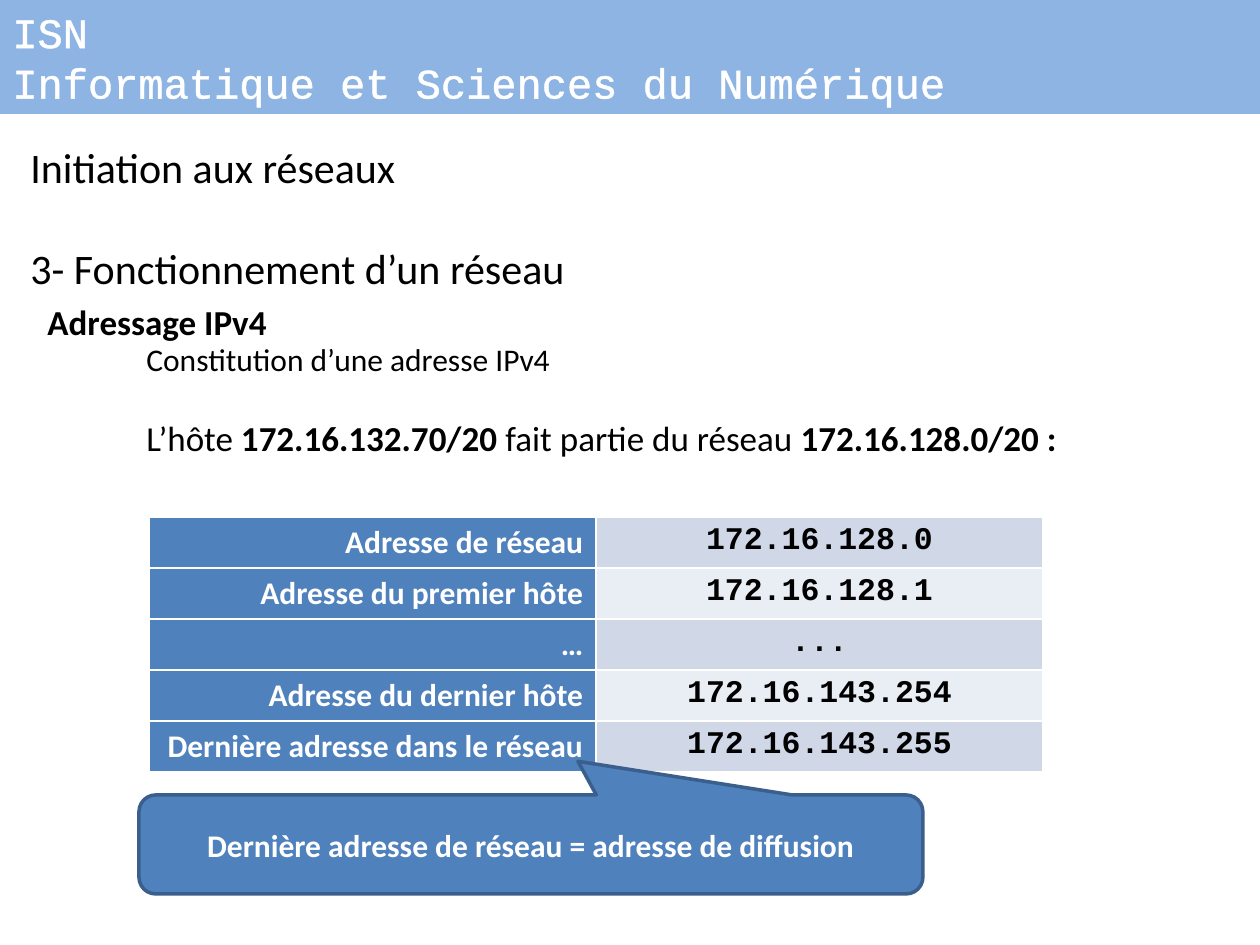
from lxml.etree import SubElement
from pptx import Presentation
from pptx.dml.color import RGBColor
from pptx.enum.shapes import MSO_SHAPE as Shape
from pptx.enum.text import MSO_ANCHOR as Anchor, PP_ALIGN as Align
from pptx.oxml import parse_xml
from pptx.oxml.ns import nsdecls, qn
from pptx.util import Emu, Pt

SCALE = 914400 / 126
BLUE, WHITE, BLACK = "4F81BD", "FFFFFF", "000000"
BANDS = ("D0D8E8", "E9EDF4")
BODY, MONO = "Calibri", "Courier New"

# Each paragraph is (space before, [(text, size, bold), ...]).
BANNER = [
    (0, [("ISN", 24, False)]),
    (0, [("Informatique et Sciences du Numérique", 24, False)]),
]
TEXTS = [
    ((18, 135, 566, 165), [
        (0, [("Initiation aux réseaux", 24, False)]),
        (29, [("3- Fonctionnement d’un réseau", 24, False)]),
    ]),
    ((35, 294, 1181, 55), [(0, [("Adressage IPv4", 20, True)])]),
    ((134, 334, 953, 208), [
        (0, [("Constitution d’une adresse IPv4", 18, False)]),
        (22, [
            ("L’hôte", 20, False),
            (" 172.16.132.70/20 ", 20, True),
            ("fait partie du réseau ", 20, False),
            ("172.16.128.0/20 :", 20, True),
        ]),
    ]),
]
ADDRESSES = [
    ("Adresse de réseau", "172.16.128.0"),
    ("Adresse du premier hôte", "172.16.128.1"),
    ("…", "..."),
    ("Adresse du dernier hôte", "172.16.143.254"),
    ("Dernière adresse dans le réseau", "172.16.143.255"),
]
CALLOUT = [(0, [("Dernière adresse de réseau = adresse de diffusion", 18, True)])]


def px(value):
    return Emu(round(value * SCALE))


def colour(value):
    return RGBColor.from_string(value)


def paint(target, value):
    target.fill.solid()
    target.fill.fore_color.rgb = colour(value)


def write(frame, paras, font=BODY, ink=BLACK, align=Align.LEFT):
    frame.word_wrap = True
    for index, (gap, spans) in enumerate(paras):
        para = frame.add_paragraph() if index else frame.paragraphs[0]
        para.alignment = align
        if gap:
            para.space_before = Pt(gap)
        for text, size, bold in spans:
            span = para.add_run()
            span.text = text
            for name, value in dict(name=font, size=Pt(size), bold=bold).items():
                setattr(span.font, name, value)
            span.font.color.rgb = colour(ink)


def add_block(page, kind, place, fill):
    block = page.shapes.add_shape(kind, *map(px, place))
    block.shadow.inherit = False
    paint(block, fill)
    return block


def add_banner(page):
    banner = add_block(page, Shape.RECTANGLE, (0, 0, 1260, 114), "8EB4E3")
    banner.line.fill.background()
    banner.text_frame.vertical_anchor = Anchor.TOP
    write(banner.text_frame, BANNER, MONO, WHITE)
    for para in banner.text_frame.paragraphs:
        for span in para.runs:
            outline = parse_xml(
                f'<a:ln {nsdecls("a")} w="18415"><a:solidFill>'
                f'<a:srgbClr val="{WHITE}"/></a:solidFill></a:ln>')
            span.font._element.insert(0, outline)


def add_borders(cell):
    props = cell._tc.get_or_add_tcPr()
    for side in ("lnL", "lnR", "lnT", "lnB"):
        border = SubElement(props, qn(f"a:{side}"), w=str(Pt(1)))
        fill = SubElement(border, qn("a:solidFill"))
        SubElement(fill, qn("a:srgbClr"), val=WHITE)


def add_addresses(page):
    place = map(px, (149, 517, 894, 255))
    table = page.shapes.add_table(len(ADDRESSES), 2, *place).table
    for row, texts in enumerate(ADDRESSES):
        styles = ((BLUE, BODY, WHITE, Align.RIGHT),
                  (BANDS[row % 2], MONO, BLACK, Align.CENTER))
        for column, (text, style) in enumerate(zip(texts, styles)):
            fill, *text_style = style
            cell = table.cell(row, column)
            add_borders(cell)
            paint(cell, fill)
            write(cell.text_frame, [(0, [(text, 18, True)])], *text_style)


def add_callout(page):
    callout = add_block(page, Shape.ROUNDED_RECTANGULAR_CALLOUT, (139, 795, 784, 99), BLUE)
    callout.line.color.rgb = colour("3A5F8C")
    callout.line.width = Pt(2)
    for index, value in enumerate((0.06, -0.84, 0.17)):
        callout.adjustments[index] = value
    callout.text_frame.vertical_anchor = Anchor.MIDDLE
    write(callout.text_frame, CALLOUT, BODY, WHITE, Align.CENTER)


def main():
    """Build the slide on IPv4 addressing."""
    deck = Presentation()
    deck.slide_width, deck.slide_height = px(1260), px(945)
    page = deck.slides.add_slide(deck.slide_layouts[6])
    add_banner(page)
    for place, paras in TEXTS:
        box = page.shapes.add_textbox(*map(px, place))
        write(box.text_frame, paras)
    add_addresses(page)
    add_callout(page)
    deck.save("out.pptx")


if __name__ == "__main__":
    main()
